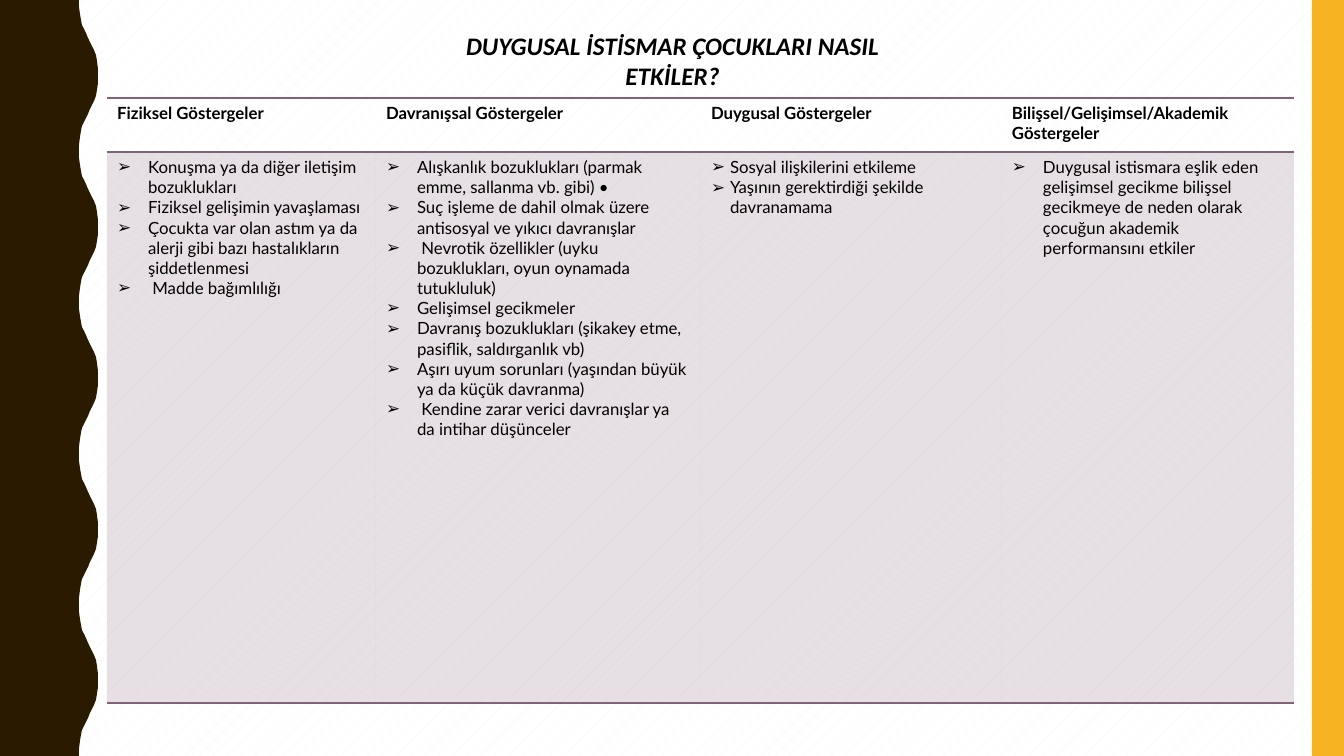
from dataclasses import dataclass
from typing import Any

from lxml import etree
from pptx import Presentation
from pptx import util as u
from pptx.dml.color import RGBColor
from pptx.enum import dml, shapes, text
from pptx.oxml.ns import qn

EMU_PER_PX = 914400 / 100.8
SLIDE_WIDTH, SLIDE_HEIGHT = 1344, 756
BLACK, BROWN, YELLOW, MAUVE = "000000", "2A1A00", "F8B323", "826276"
NO_STYLE = "{2D5ABB26-0587-4C30-8999-92F81FD0307C}"
HALF_WAVES = 10
WAVE_X = [79, 79, 80, 81, 82, 84, 86, 88, 90, 92, 94, 96, 97, 98, 98]
WAVE_Y = [0, 7, 14, 20, 25, 29, 33, 38, 42, 46, 50, 55, 61, 69]
HEADER_HEIGHT, BODY_HEIGHT = 54, 551
TITLE_FORMAT = {"name": "Calibri", "size": u.Pt(18), "bold": True, "italic": True}
HEADER_FORMAT = {"name": "Lato", "size": u.Pt(12), "bold": True}
BODY_FORMAT = {**HEADER_FORMAT, "bold": False}


@dataclass
class Indicator:
    heading: str
    width: int
    items: list[str]
    indent: int = 31


INDICATORS = [
    Indicator("Fiziksel Göstergeler", 269, [
        "Konuşma ya da diğer iletişim bozuklukları",
        "Fiziksel gelişimin yavaşlaması",
        "Çocukta var olan astım ya da alerji gibi bazı hastalıkların şiddetlenmesi",
        " Madde bağımlılığı",
    ]),
    Indicator("Davranışsal Göstergeler", 325, [
        "Alışkanlık bozuklukları (parmak emme, sallanma vb. gibi) •",
        "Suç işleme de dahil olmak üzere antisosyal ve yıkıcı davranışlar",
        " Nevrotik özellikler (uyku bozuklukları, oyun oynamada tutukluluk)",
        "Gelişimsel gecikmeler",
        "Davranış bozuklukları (şikakey etme, pasiflik, saldırganlık vb)",
        "Aşırı uyum sorunları (yaşından büyük ya da küçük davranma)",
        " Kendine zarar verici davranışlar ya da intihar düşünceler",
    ]),
    Indicator("Duygusal Göstergeler", 301, [
        "Sosyal ilişkilerini etkileme",
        "Yaşının gerektirdiği şekilde davranamama",
    ], 19),
    Indicator("Bilişsel/Gelişimsel/Akademik Göstergeler", 292, [
        "Duygusal istismara eşlik eden gelişimsel gecikme bilişsel gecikmeye de "
        "neden olarak çocuğun akademik performansını etkiler",
    ]),
]


def px(length: float) -> u.Emu:
    return u.Emu(round(length * EMU_PER_PX))


def set_color(color: Any, value: str) -> None:
    color.rgb = RGBColor.from_string(value)


def set_values(target: Any, values: dict[str, Any]) -> None:
    for name, value in values.items():
        setattr(target, name, value)


def write(paragraph: Any, content: str, font_format: dict[str, Any]) -> None:
    run = paragraph.add_run()
    run.text = content
    set_values(run.font, font_format)
    set_color(run.font.color, BLACK)


def paint(shape: Any, value: str) -> None:
    shape.shadow.inherit = False
    shape.fill.solid()
    set_color(shape.fill.fore_color, value)
    shape.line.fill.background()


def add_background(slide: Any) -> None:
    fill = slide.background.fill
    fill.patterned()
    fill.pattern = dml.MSO_PATTERN.PERCENT_5
    set_color(fill.fore_color, "F3F3F2")
    set_color(fill.back_color, "FFFFFF")


def add_wave(slide: Any) -> None:
    half_height = SLIDE_HEIGHT / HALF_WAVES
    edge = []
    for half in range(HALF_WAVES):
        across = WAVE_X[::-1] if half % 2 else WAVE_X
        edge += [(x, half * half_height + y) for x, y in zip(across, WAVE_Y)]
    builder = slide.shapes.build_freeform(0, 0, scale=EMU_PER_PX)
    builder.add_line_segments([*edge, (WAVE_X[0], SLIDE_HEIGHT), (0, SLIDE_HEIGHT)])
    paint(builder.convert_to_shape(), BROWN)


def add_bar(slide: Any) -> None:
    bar = slide.shapes.add_shape(
        shapes.MSO_SHAPE.RECTANGLE, px(1312), 0, px(32), px(SLIDE_HEIGHT))
    paint(bar, YELLOW)


def add_title(slide: Any) -> None:
    title = slide.shapes.title
    set_values(title, {"left": px(448), "top": px(25), "width": px(449), "height": px(72)})
    set_values(title.text_frame, {
        "word_wrap": True,
        "vertical_anchor": text.MSO_ANCHOR.TOP,
        "auto_size": text.MSO_AUTO_SIZE.SHAPE_TO_FIT_TEXT,
    })
    paragraph = title.text_frame.paragraphs[0]
    paragraph.alignment = text.PP_ALIGN.CENTER
    write(paragraph, "DUYGUSAL İSTİSMAR ÇOCUKLARI NASIL ETKİLER?", TITLE_FORMAT)


def add_border(cell: Any, side: str) -> None:
    line = etree.Element(qn(f"a:ln{side}"), w=str(u.Pt(1)))
    fill = etree.SubElement(line, qn("a:solidFill"))
    etree.SubElement(fill, qn("a:srgbClr"), val=MAUVE)
    cell._tc.get_or_add_tcPr().insert(0, line)


def add_bullet(paragraph: Any, indent: int) -> None:
    properties = paragraph._p.get_or_add_pPr()
    properties.set("marL", str(px(indent)))
    properties.set("indent", str(-px(indent)))
    etree.SubElement(properties, qn("a:buFont"), typeface="Arial")
    etree.SubElement(properties, qn("a:buChar"), char="➢")


def fill_header(cell: Any, indicator: Indicator) -> None:
    cell.fill.background()
    add_border(cell, "B")
    add_border(cell, "T")
    write(cell.text_frame.paragraphs[0], indicator.heading, HEADER_FORMAT)


def fill_body(cell: Any, indicator: Indicator) -> None:
    cell.fill.solid()
    set_color(cell.fill.fore_color, MAUVE)
    color = cell._tc.tcPr.find(f".//{qn('a:srgbClr')}")
    etree.SubElement(color, qn("a:alpha"), val="20000")
    add_border(cell, "B")
    frame = cell.text_frame
    for index, item in enumerate(indicator.items):
        paragraph = frame.add_paragraph() if index else frame.paragraphs[0]
        add_bullet(paragraph, indicator.indent)
        write(paragraph, item, BODY_FORMAT)


def add_indicator_table(slide: Any) -> None:
    width = sum(indicator.width for indicator in INDICATORS)
    table = slide.shapes.add_table(
        2, len(INDICATORS), px(107), px(98), px(width),
        px(HEADER_HEIGHT + BODY_HEIGHT)).table
    table.horz_banding = False
    table._tbl.tblPr.find(qn("a:tableStyleId")).text = NO_STYLE
    for row, height in zip(table.rows, (HEADER_HEIGHT, BODY_HEIGHT)):
        row.height = px(height)
    for index, indicator in enumerate(INDICATORS):
        table.columns[index].width = px(indicator.width)
        fill_header(table.cell(0, index), indicator)
        fill_body(table.cell(1, index), indicator)


def main() -> None:
    presentation = Presentation()
    presentation.slide_width = px(SLIDE_WIDTH)
    presentation.slide_height = px(SLIDE_HEIGHT)
    slide = presentation.slides.add_slide(presentation.slide_layouts[5])
    add_background(slide)
    add_wave(slide)
    add_bar(slide)
    add_indicator_table(slide)
    add_title(slide)
    presentation.save("out.pptx")


if __name__ == "__main__":
    main()
